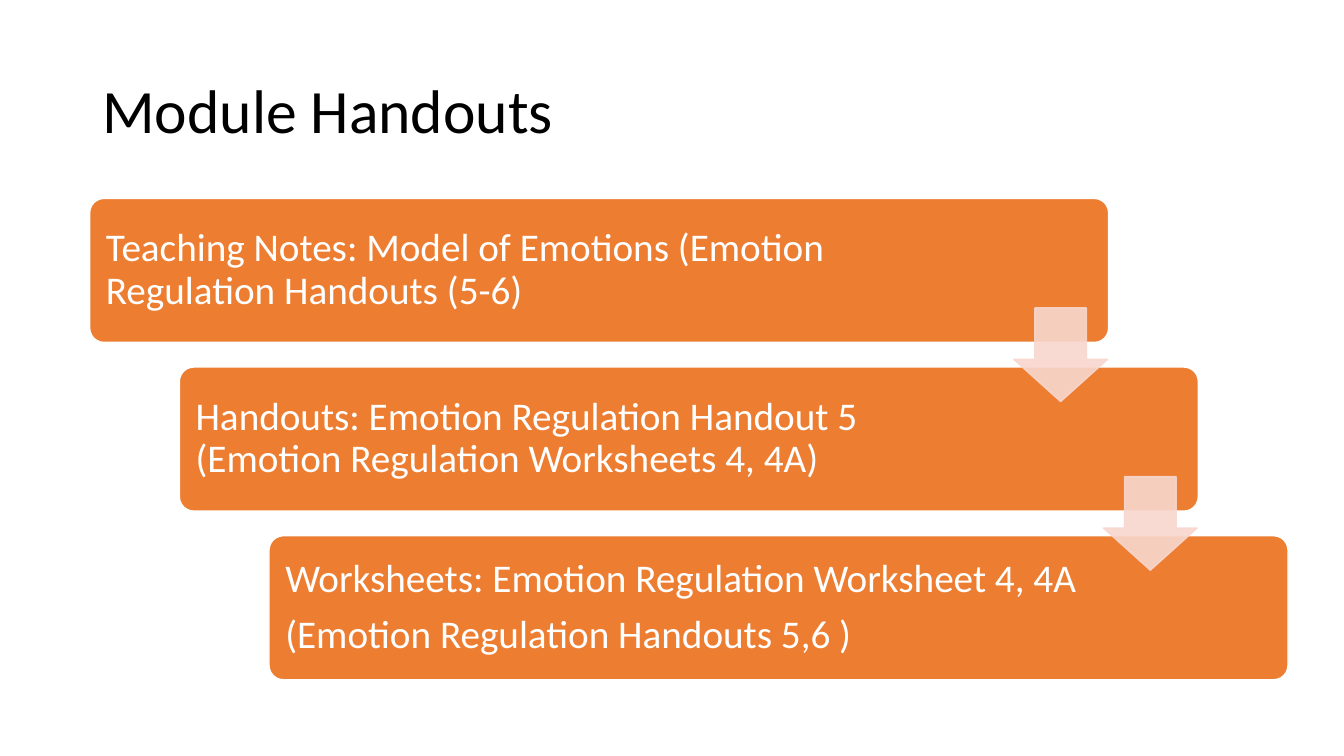
import pptx
import pptx.util
import pptx.dml.color
import pptx.enum.shapes
import pptx.enum.text
import pptx.oxml.ns
from lxml import etree

Cm = pptx.util.Cm
Pt = pptx.util.Pt
Preset = pptx.enum.shapes.MSO_SHAPE

COLORS = {"black": "000000", "white": "FFFFFF", "orange": "ED7D31", "blush": "F8D7CE"}

# Measures in centimetres
FIRST_LEFT, FIRST_TOP = 2.26, 5.0
SHIFT_RIGHT, SHIFT_DOWN = 2.26, 4.25
CARD_WIDTH, CARD_HEIGHT = 25.68, 3.63
TEXT_MARGIN = 0.11
ARROW_SIZE = 2.36
ARROW_RIGHT, ARROW_DOWN = 23.29, 2.76

# Text width and paragraphs of each card
HANDOUTS = [
    (21.74, ["Teaching Notes: Model of Emotions (Emotion Regulation Handouts (5-6)"]),
    (20.83, ["Handouts: Emotion Regulation Handout 5 (Emotion Regulation Worksheets 4, 4A)"]),
    (20.83, ["Worksheets: Emotion Regulation Worksheet 4, 4A",
             "(Emotion Regulation Handouts 5,6 )"]),
]


def rgb(name):
    return pptx.dml.color.RGBColor.from_string(COLORS[name])


def add_text(slide, paragraphs, left, top, width, height, *, size, color,
             inset_x=0.3, inset_y=0.3, space_after=0):
    box = slide.shapes.add_textbox(Cm(left), Cm(top), Cm(width), Cm(height))
    frame = box.text_frame
    frame.word_wrap = True
    frame.vertical_anchor = pptx.enum.text.MSO_ANCHOR.MIDDLE
    frame.margin_left = frame.margin_right = Cm(inset_x)
    frame.margin_top = frame.margin_bottom = Cm(inset_y)
    for index, text in enumerate(paragraphs):
        paragraph = frame.paragraphs[0] if index == 0 else frame.add_paragraph()
        paragraph.line_spacing = 0.9
        paragraph.space_after = Pt(space_after)
        run = paragraph.add_run()
        run.text = text
        run.font.name = "Calibri"
        run.font.size = Pt(size)
        run.font.color.rgb = rgb(color)


def add_preset(slide, preset, left, top, width, height, *, fill, line, adjustments):
    shape = slide.shapes.add_shape(preset, Cm(left), Cm(top), Cm(width), Cm(height))
    shape.shadow.inherit = False
    for index, value in enumerate(adjustments):
        shape.adjustments[index] = value
    shape.fill.solid()
    shape.fill.fore_color.rgb = rgb(fill)
    shape.line.color.rgb = rgb(line)
    shape.line.width = Pt(1)
    return shape


def set_opacity(shape, percent):
    """Apply one opacity to both the fill and the outline."""
    for color in shape.element.spPr.iter(pptx.oxml.ns.qn("a:srgbClr")):
        alpha = etree.SubElement(color, pptx.oxml.ns.qn("a:alpha"))
        alpha.set("val", str(percent * 1000))


def step_position(index):
    return FIRST_LEFT + index * SHIFT_RIGHT, FIRST_TOP + index * SHIFT_DOWN


def add_card(slide, index, text_width, paragraphs):
    left, top = step_position(index)
    add_preset(slide, Preset.ROUNDED_RECTANGLE, left, top, CARD_WIDTH, CARD_HEIGHT,
               fill="orange", line="white", adjustments=[0.1])
    add_text(slide, paragraphs, left + TEXT_MARGIN, top + TEXT_MARGIN,
             text_width, CARD_HEIGHT - 2 * TEXT_MARGIN,
             size=28, color="white", space_after=9.8)


def add_arrow(slide, index):
    left, top = step_position(index)
    arrow = add_preset(slide, Preset.DOWN_ARROW, left + ARROW_RIGHT, top + ARROW_DOWN,
                       ARROW_SIZE, ARROW_SIZE,
                       fill="blush", line="blush", adjustments=[0.55, 0.45])
    set_opacity(arrow, 90)


def main():
    presentation = pptx.Presentation()
    presentation.slide_width = Cm(33.87)
    presentation.slide_height = Cm(19.05)
    slide = presentation.slides.add_slide(presentation.slide_layouts[6])

    add_text(slide, ["Module Handouts"], 2.33, 1.01, 29.21, 3.68,
             size=44, color="black", inset_x=0.25, inset_y=0.13)
    for index, (text_width, paragraphs) in enumerate(HANDOUTS):
        add_card(slide, index, text_width, paragraphs)
    for index in range(len(HANDOUTS) - 1):
        add_arrow(slide, index)

    presentation.save("out.pptx")


if __name__ == "__main__":
    main()
